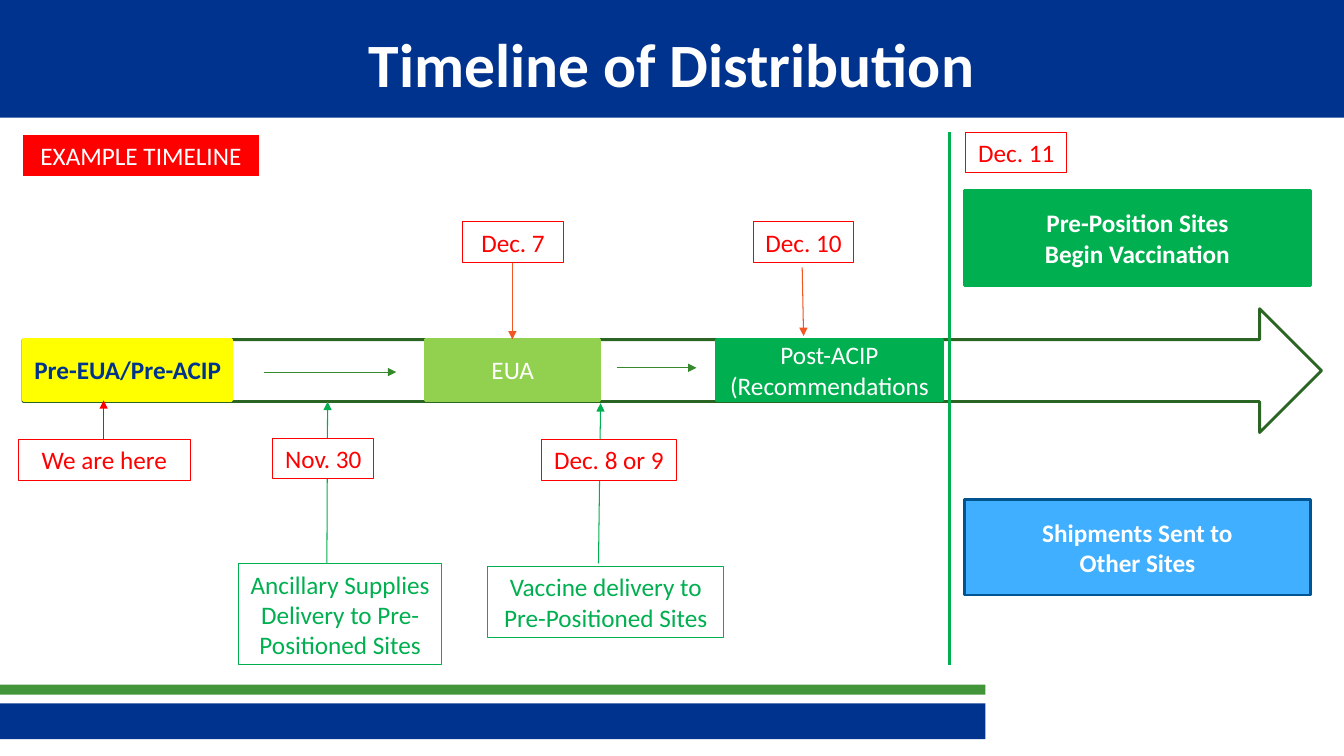
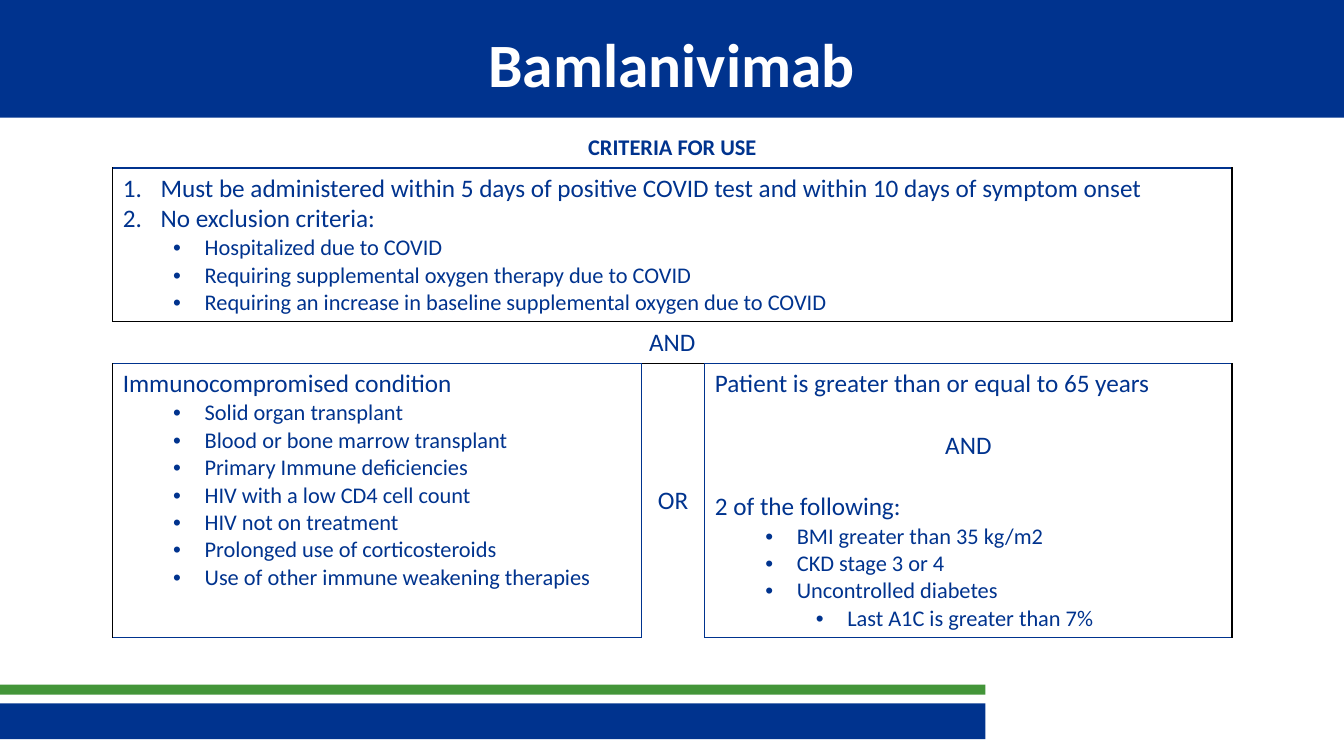
from lxml import etree
from pptx import Presentation
from pptx.dml.color import RGBColor
from pptx.enum.shapes import MSO_CONNECTOR, MSO_SHAPE
from pptx.enum.text import MSO_ANCHOR, PP_ALIGN
from pptx.oxml.ns import qn
from pptx.util import Pt

RECT, RIGHT_ARROW = MSO_SHAPE.RECTANGLE, MSO_SHAPE.RIGHT_ARROW
STRAIGHT = MSO_CONNECTOR.STRAIGHT
LEFT, CENTER = PP_ALIGN.LEFT, PP_ALIGN.CENTER
TOP, MIDDLE = MSO_ANCHOR.TOP, MSO_ANCHOR.MIDDLE

FONT = "Calibri"
NAVY, LEAF, WHITE, BLACK = "00338E", "439539", "FFFFFF", "000000"
RED, ORANGE, YELLOW = "FF0000", "F15623", "FFFF00"
GREEN, LIME, FOREST, MOSS = "00B050", "92D050", "2A6523", "36882C"
SKY, STEEL = "40AFFF", "005490"
PLAIN_TABLE = "{2D5ABB26-0587-4C30-8999-92F81FD0307C}"

SLIDE_W, SLIDE_H = 960, 540
TITLE_BOX = (48, 12, 864, 66)
BANDS = [
    ((-2, 502.5, 706, 25.5), NAVY),
    ((-2, 489, 706, 7.2), LEAF),
    ((0, 0, SLIDE_W, 84), NAVY),
]
LABEL_H = 29

# Paragraph kinds: size, level, left margin, hanging indent, bullet
KINDS = {
    "plain": (18, 0, 0, 0, None),
    "number": (18, 0, 27, 27, "number"),
    "bullet": (16, 1, 58.5, 22.5, "dot"),
    "sub": (16, 2, 94.5, 22.5, "dot"),
}


def color(hex_string):
    return RGBColor.from_string(hex_string)


def apply(target, **values):
    for name, value in values.items():
        setattr(target, name, value)


def write(paragraph, text, ink, size=18, bold=False):
    run = paragraph.add_run()
    run.text = text
    apply(run.font, name=FONT, size=Pt(size), bold=bold)
    run.font.color.rgb = color(ink)


def add_box(slide, box, text="", fill=None, line=None, weight=0.75,
            ink=WHITE, bold=False, geometry=RECT):
    """Add a preset shape; each line of text becomes a centred paragraph."""
    shape = slide.shapes.add_shape(geometry, *map(Pt, box))
    shape.shadow.inherit = False
    if fill:
        shape.fill.solid()
        shape.fill.fore_color.rgb = color(fill)
    else:
        shape.fill.background()
    if line:
        shape.line.color.rgb = color(line)
        shape.line.width = Pt(weight)
    else:
        shape.line.fill.background()
    if text:
        frame = shape.text_frame
        apply(frame, word_wrap=True, vertical_anchor=MIDDLE,
              margin_left=Pt(3.6), margin_right=Pt(3.6))
        for i, words in enumerate(text.split("\n")):
            paragraph = frame.add_paragraph() if i else frame.paragraphs[0]
            paragraph.alignment = CENTER
            write(paragraph, words, ink, bold=bold)
    return shape


def add_line(slide, start, end, ink, weight=0.75, arrow=True):
    line = slide.shapes.add_connector(STRAIGHT, *map(Pt, (*start, *end)))
    line.line.color.rgb = color(ink)
    line.line.width = Pt(weight)
    if arrow:
        etree.SubElement(line.line._get_or_add_ln(), qn("a:tailEnd"), type="triangle")
    etree.SubElement(line._element.spPr, qn("a:effectLst"))


def add_bands(slide):
    """Put the bands behind the title on the layout that the slides share."""
    layout_tree = slide.slide_layout.shapes.element
    for i, (box, fill) in enumerate(BANDS):
        layout_tree.insert(2 + i, add_box(slide, box, fill=fill)._element)


def add_titled_slide(prs, text):
    slide = prs.slides.add_slide(prs.slide_layouts[5])
    title = slide.shapes.title
    apply(title, **dict(zip(("left", "top", "width", "height"), map(Pt, TITLE_BOX))))
    title.text_frame.vertical_anchor = MIDDLE
    paragraph = title.text_frame.paragraphs[0]
    paragraph.alignment = CENTER
    write(paragraph, text, WHITE, 44, True)
    return slide


def timeline_track(slide, box):
    x, y, _, h = box
    add_box(slide, box, line=FOREST, weight=2, geometry=RIGHT_ARROW)
    stages = [
        (287.5, 124.5, "EUA", LIME, WHITE, False),
        (495.5, 161, "Post-ACIP (Recommendations", GREEN, WHITE, False),
        (0.5, 148.5, "Pre-EUA/Pre-ACIP", YELLOW, NAVY, True),
    ]
    for dx, width, text, fill, ink, bold in stages:
        add_box(slide, (x + dx, y + h / 4, width, h / 2 - 1), text, fill, fill, 2, ink, bold)
    for start, end, dy in [(172, 266.5, 1), (424, 481, -2)]:
        level = y + h / 2 + dy
        add_line(slide, (x + start, level), (x + end, level), MOSS)


def milestones(slide, box):
    x, y = box[:2]
    pointers = [
        (58, 220, 58, 192, RED),
        (217.5, 308, 218, 193, GREEN),
        (411.5, 308.5, 413, 194, GREEN),
        (350, 94, 350, 148.5, ORANGE),
        (557, 97, 558, 146, ORANGE),
    ]
    for x1, y1, x2, y2, ink in pointers:
        add_line(slide, (x + x1, y + y1), (x + x2, y + y2), ink)
    dates = [
        (-3, 220, 123, "We are here"),
        (179, 219, 72, "Nov. 30"),
        (314.5, 64.5, 72, "Dec. 7"),
        (522, 64.5, 72, "Dec. 10"),
        (370.5, 220, 97, "Dec. 8 or 9"),
    ]
    for dx, dy, width, text in dates:
        add_box(slide, (x + dx, y + dy, width, LABEL_H), text, WHITE, RED, ink=RED)
    deliveries = [
        (154.5, 308.5, 145, 72.5, "Ancillary Supplies\nDelivery to Pre-Positioned Sites"),
        (332.5, 310.5, 168.5, 51, "Vaccine delivery to Pre-Positioned Sites"),
    ]
    for dx, dy, width, height, text in deliveries:
        add_box(slide, (x + dx, y + dy, width, height), text, line=GREEN, ink=GREEN)
    add_box(slide, (x + 0.5, y + 2.5, 168.5, LABEL_H), "EXAMPLE TIMELINE", RED, RED)


def outcomes(slide, box):
    x, y, w, h = box
    add_line(slide, (x, y), (x, y + h), GREEN, 2.25, arrow=False)
    add_box(slide, (x + 12, y + 0.5, 72, LABEL_H), "Dec. 11", line=RED, ink=RED)
    results = [
        (42, "Pre-Position Sites\nBegin Vaccination", GREEN, GREEN),
        (263, "Shipments Sent to\nOther Sites", SKY, STEEL),
    ]
    for dy, text, fill, line in results:
        add_box(slide, (x + 11, y + dy, w - 11, 68), text, fill, line, 2, bold=True)


def add_entry(paragraph, kind, text, align=LEFT, gap=0, size=None, bold=False):
    kind_size, level, margin, hang, bullet = KINDS[kind]
    apply(paragraph, alignment=align, level=level)
    if gap:
        paragraph.space_before = Pt(gap)
    props = paragraph._p.get_or_add_pPr()
    props.set("marL", str(Pt(margin)))
    props.set("indent", str(-Pt(hang)))
    if bullet == "number":
        etree.SubElement(props, qn("a:buAutoNum"), type="arabicPeriod")
    elif bullet == "dot":
        etree.SubElement(props, qn("a:buFont"), typeface="Arial")
        etree.SubElement(props, qn("a:buChar"), char="•")
    write(paragraph, text, NAVY, size or kind_size, bold)


def set_borders(cell, edges):
    """Draw the given sides of a cell; edges maps L, R, T, B to a colour."""
    props = cell._tc.get_or_add_tcPr()
    drawn = [side for side in "LRTB" if side in edges]
    for i, side in enumerate(drawn):
        edge = etree.Element(qn("a:ln" + side), w=str(Pt(1)))
        fill = etree.SubElement(edge, qn("a:solidFill"))
        etree.SubElement(fill, qn("a:srgbClr"), val=edges[side])
        props.insert(i, edge)


def criteria_table(slide, box, columns, rows):
    table = slide.shapes.add_table(len(rows), len(columns), *map(Pt, box)).table
    apply(table, first_row=False, horz_banding=False)
    table._tbl.tblPr.find(qn("a:tableStyleId")).text = PLAIN_TABLE
    for column, width in zip(table.columns, columns):
        column.width = Pt(width)
    for r, (height, cells) in enumerate(rows):
        table.rows[r].height = Pt(height)
        if len(cells) == 1:
            table.cell(r, 0).merge(table.cell(r, len(columns) - 1))
            cells = cells + [(MIDDLE, cells[0][1], [])] * (len(columns) - 1)
        for c, (anchor, edges, entries) in enumerate(cells):
            cell = table.cell(r, c)
            cell.fill.background()
            cell.vertical_anchor = anchor
            set_borders(cell, edges)
            for i, entry in enumerate(entries):
                frame = cell.text_frame
                add_entry(frame.add_paragraph() if i else frame.paragraphs[0], *entry)


def timeline_slide(prs):
    slide = add_titled_slide(prs, "Timeline of Distribution")
    add_bands(slide)
    timeline_track(slide, (16.5, 220.5, 927.5, 88.5))
    milestones(slide, (16, 94, 660, 382))
    outcomes(slide, (678, 94, 258, 381))


def criteria_slide(prs):
    slide = add_titled_slide(prs, "Bamlanivimab")
    heading = [("plain", "CRITERIA FOR USE", CENTER, 0, 16, True)]
    required = [
        ("number", "Must be administered within 5 days of positive COVID test "
                   "and within 10 days of symptom onset"),
        ("number", "No exclusion criteria:"),
        ("bullet", "Hospitalized due to COVID"),
        ("bullet", "Requiring supplemental oxygen therapy due to COVID"),
        ("bullet", "Requiring an increase in baseline supplemental oxygen due to COVID"),
    ]
    conditions = [
        "Solid organ transplant", "Blood or bone marrow transplant",
        "Primary Immune deficiencies", "HIV with a low CD4 cell count",
        "HIV not on treatment", "Prolonged use of corticosteroids",
        "Use of other immune weakening therapies",
    ]
    immune = [("plain", "Immunocompromised condition")]
    immune += [("bullet", condition) for condition in conditions]
    age = [
        ("plain", "Patient is greater than or equal to 65 years"),
        ("plain", "AND", CENTER, 22),
        ("plain", "2 of the following:", LEFT, 22),
        ("bullet", "BMI greater than 35 kg/m2"),
        ("bullet", "CKD stage 3 or 4"),
        ("bullet", "Uncontrolled diabetes"),
        ("sub", "Last A1C is greater than 7%"),
    ]
    framed = dict.fromkeys("LRTB", NAVY)
    rows = [
        (29.3, [(MIDDLE, {"B": NAVY}, heading)]),
        (109.3, [(MIDDLE, {"L": BLACK, "R": BLACK, "T": NAVY, "B": BLACK}, required)]),
        (30, [(MIDDLE, {"T": BLACK}, [("plain", "AND", CENTER)])]),
        (195, [
            (TOP, framed | {"L": BLACK}, immune),
            (MIDDLE, {"L": NAVY, "R": NAVY}, [("plain", "OR", CENTER)]),
            (TOP, framed | {"R": BLACK}, age),
        ]),
    ]
    criteria_table(slide, (80.5, 90.7, 799.5, 363.6), (377.5, 45.5, 376.5), rows)


def main():
    prs = Presentation()
    apply(prs, slide_width=Pt(SLIDE_W), slide_height=Pt(SLIDE_H))
    timeline_slide(prs)
    criteria_slide(prs)
    prs.save("out.pptx")


if __name__ == "__main__":
    main()
